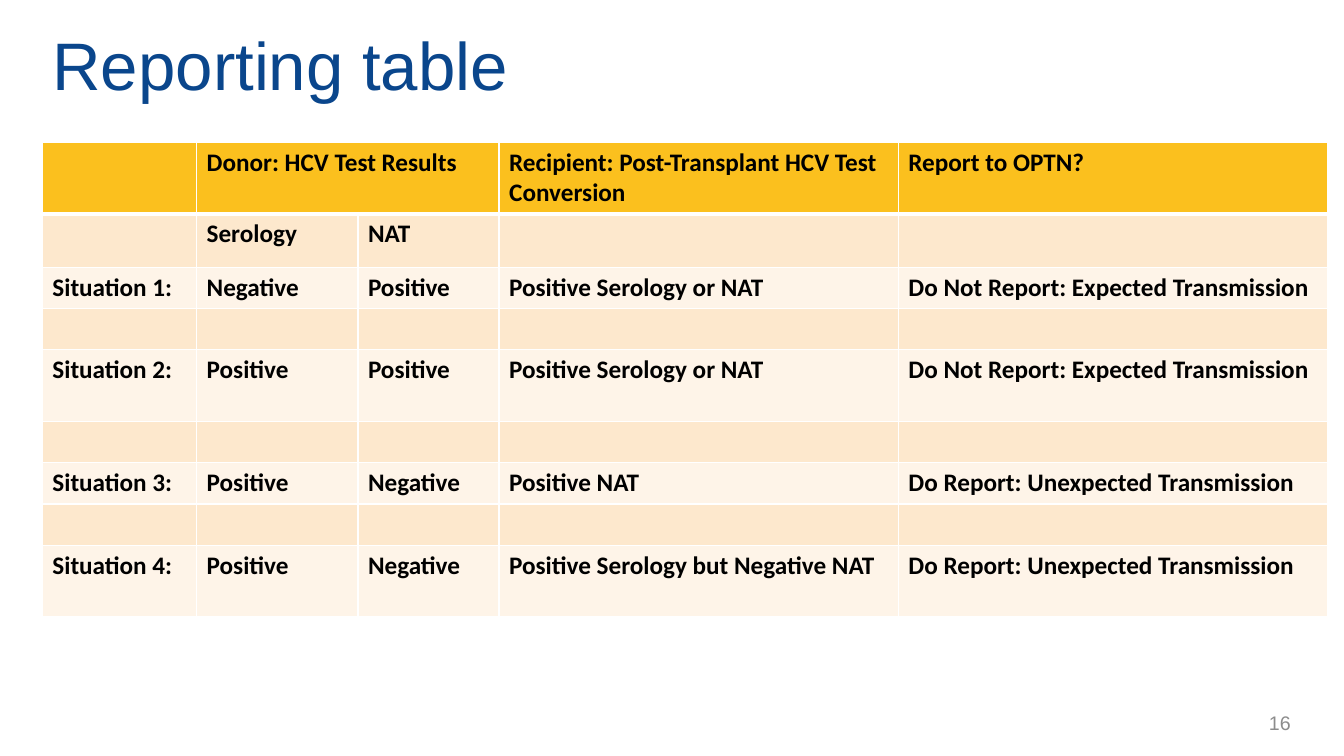
from lxml.etree import SubElement
from pptx import Presentation
from pptx.dml.color import RGBColor
from pptx.enum.text import MSO_ANCHOR, PP_ALIGN
from pptx.oxml.ns import qn
from pptx.util import Inches, Pt

COLORS = {
    "title": "0A468C", "text": "000000", "number": "8C8C8C", "border": "FFFFFF",
    "header": "FBC01E", "dark": "FDE8CD", "light": "FEF4E8",
}
COLUMNS = [1.53, 1.6, 1.4, 3.96, 4.26]
HEIGHTS = [0.7, 0.53, 0.41, 0.41, 0.71, 0.41, 0.41, 0.41, 0.71]
EXPECTED = "Do Not Report: Expected Transmission"
UNEXPECTED = "Do Report: Unexpected Transmission"
BLANK = [""] * 5
ROWS = [
    ["", "Donor: HCV Test Results", "",
     "Recipient: Post-Transplant HCV Test Conversion", "Report to OPTN?"],
    ["", "Serology", "NAT", "", ""],
    ["Situation 1:", "Negative", "Positive", "Positive Serology or NAT", EXPECTED],
    BLANK,
    ["Situation 2:", "Positive", "Positive", "Positive Serology or NAT", EXPECTED],
    BLANK,
    ["Situation 3:", "Positive", "Negative", "Positive NAT", UNEXPECTED],
    BLANK,
    ["Situation 4:", "Positive", "Negative",
     "Positive Serology but Negative NAT", UNEXPECTED],
]


def style(font, name, size, color, bold=False):
    """Set the face, size, colour and weight of a font."""
    font.name, font.size, font.bold = name, Pt(size), bold
    font.color.rgb = RGBColor.from_string(COLORS[color])


def add_title(slide, text, box):
    """Place the title placeholder in the box."""
    sp = slide.shapes.title
    sp.left, sp.top, sp.width, sp.height = map(Inches, box)
    tf = sp.text_frame
    tf.text = text
    tf.vertical_anchor = MSO_ANCHOR.MIDDLE
    p = tf.paragraphs[0]
    p.alignment = PP_ALIGN.LEFT
    style(p.font, "Arial", 48, "title")


def set_borders(cell, top, bottom):
    """Draw white borders around a cell, with top and bottom widths in points."""
    tc_pr = cell._tc.get_or_add_tcPr()
    for side, width in (("L", 1), ("R", 1), ("T", top), ("B", bottom)):
        ln = SubElement(tc_pr, qn(f"a:ln{side}"), w=str(Pt(width)))
        fill = SubElement(ln, qn("a:solidFill"))
        SubElement(fill, qn("a:srgbClr"), val=COLORS["border"])


def add_report_table(slide, left, top):
    """Build the reporting table from its top left corner."""
    frame = slide.shapes.add_table(
        len(ROWS), len(COLUMNS), Inches(left), Inches(top),
        Inches(sum(COLUMNS)), Inches(sum(HEIGHTS)))
    table = frame.table
    for column, width in zip(table.columns, COLUMNS):
        column.width = Inches(width)
    for i, (row, height, texts) in enumerate(zip(table.rows, HEIGHTS, ROWS)):
        row.height = Inches(height)
        fill = "header" if i == 0 else "dark" if i % 2 else "light"
        for cell, text in zip(row.cells, texts):
            cell.text = text
            style(cell.text_frame.paragraphs[0].font, "Calibri", 18, "text", True)
            set_borders(cell, 3 if i == 1 else 1, 3 if i == 0 else 1)
            cell.fill.solid()
            cell.fill.fore_color.rgb = RGBColor.from_string(COLORS[fill])
    table.cell(0, 1).merge(table.cell(0, 2))


def add_number(slide, text, box):
    """Write the slide number at the right of the box."""
    tf = slide.shapes.add_textbox(*map(Inches, box)).text_frame
    tf.word_wrap = True
    tf.vertical_anchor = MSO_ANCHOR.MIDDLE
    p = tf.paragraphs[0]
    p.text = text
    p.alignment = PP_ALIGN.RIGHT
    style(p.font, "Arial", 14, "number")


def main():
    """Build the slide and save it."""
    prs = Presentation()
    prs.slide_width, prs.slide_height = Inches(13.33), Inches(7.5)
    slide = prs.slides.add_slide(prs.slide_layouts[5])
    add_title(slide, "Reporting table", (0.42, 0.17, 12.74, 0.93))
    add_report_table(slide, 0.42, 1.41)
    add_number(slide, "16", (10.64, 6.97, 2.26, 0.4))
    prs.save("out.pptx")


if __name__ == "__main__":
    main()
